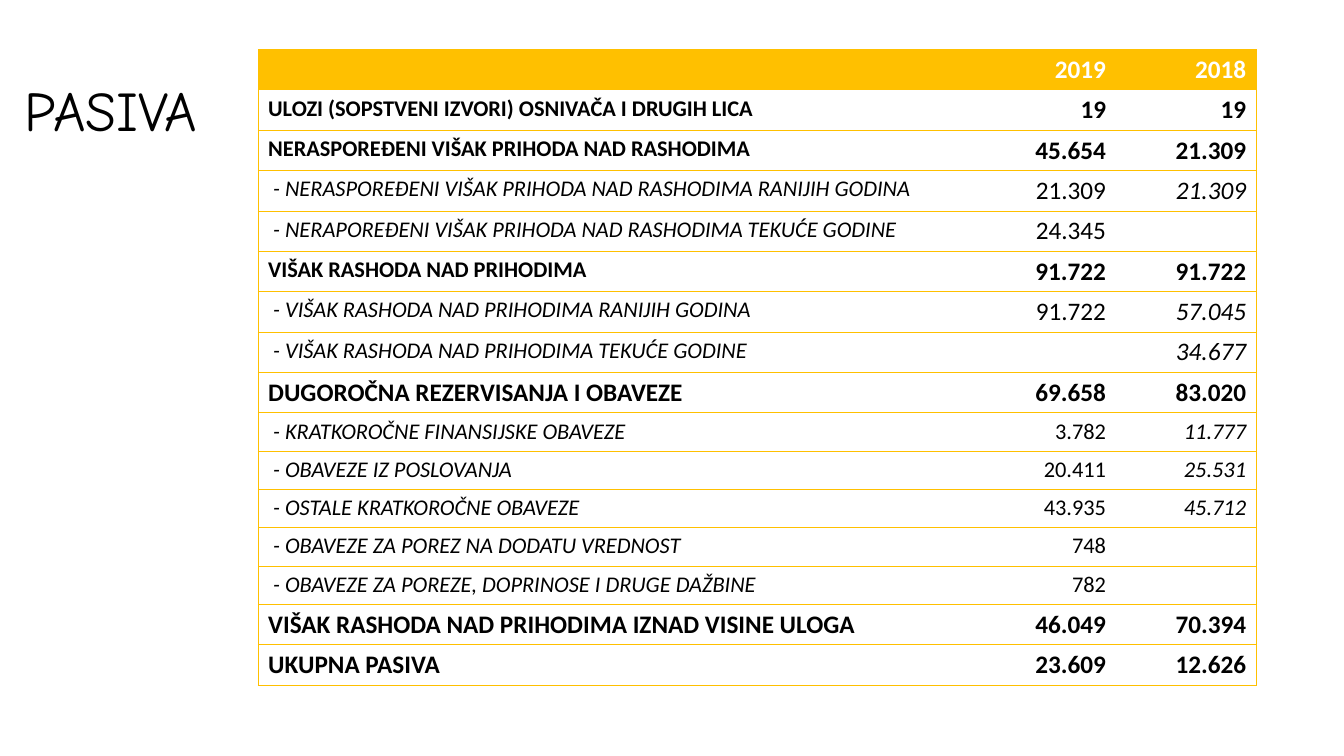
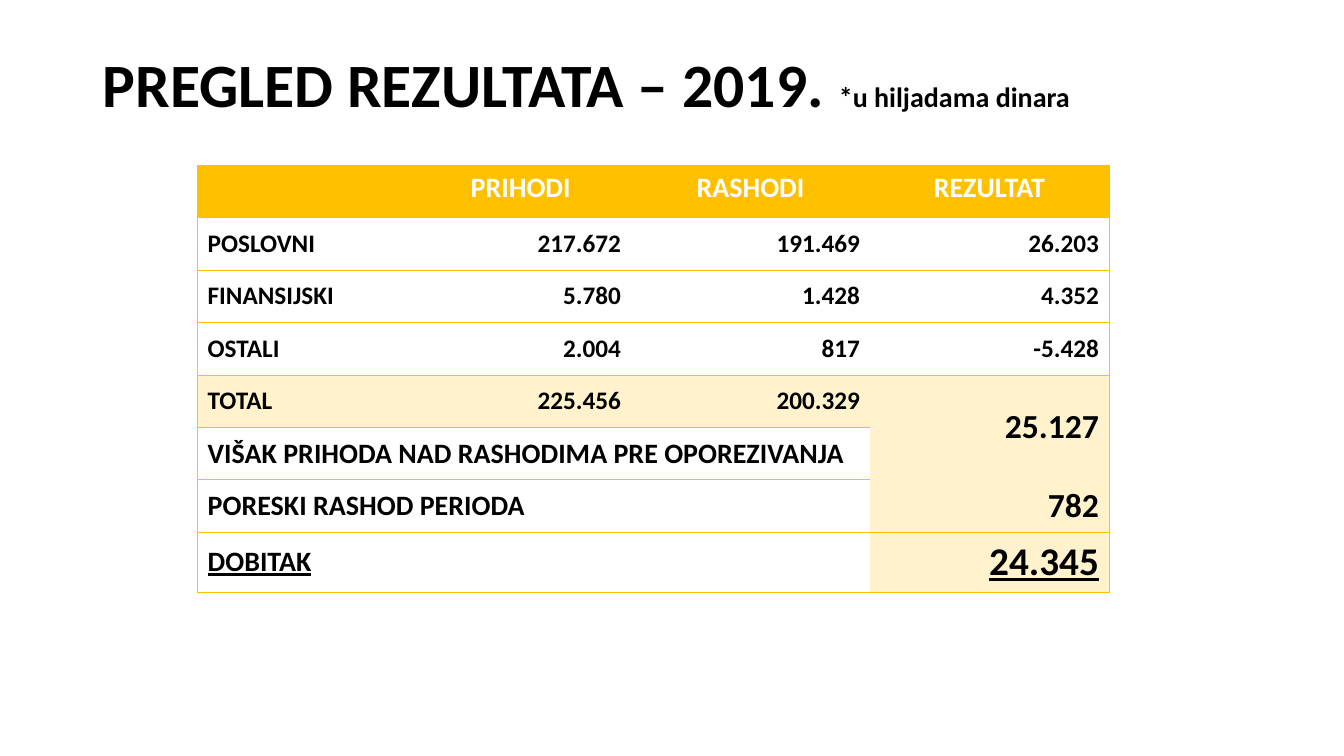
import lxml.etree
import pptx
import pptx.dml.color
import pptx.enum.text
import pptx.oxml.ns
import pptx.util

Inches = pptx.util.Inches
ALIGN = pptx.enum.text.PP_ALIGN
ANCHOR = pptx.enum.text.MSO_ANCHOR

GOLD, CREAM, WHITE, BLACK = "FFC000", "FFF2CC", "FFFFFF", "000000"
BODY_FONT = "Calibri"
BORDER_WIDTH = 0.5

LIABILITY_STYLES = {
    "header": [dict(size=18, bold=True, colour=WHITE)] * 3,
    "group": [dict(size=16, bold=True)] + [dict(size=18, bold=True)] * 2,
    "detail": [dict(size=16, italic=True), dict(size=18), dict(size=18, italic=True)],
    "item": [dict(size=16, italic=True), dict(size=16), dict(size=16, italic=True)],
    "total": [dict(size=18, bold=True)] * 3,
}
LIABILITIES = [
    ("header", "", "2019", "2018"),
    ("group", "ULOZI (SOPSTVENI IZVORI) OSNIVAČA I DRUGIH LICA", "19", "19"),
    ("group", "NERASPOREĐENI VIŠAK PRIHODA NAD RASHODIMA", "45.654", "21.309"),
    ("detail", " - NERASPOREĐENI VIŠAK PRIHODA NAD RASHODIMA RANIJIH GODINA", "21.309", "21.309"),
    ("detail", " - NERAPOREĐENI VIŠAK PRIHODA NAD RASHODIMA TEKUĆE GODINE", "24.345", ""),
    ("group", "VIŠAK RASHODA NAD PRIHODIMA", "91.722", "91.722"),
    ("detail", " - VIŠAK RASHODA NAD PRIHODIMA RANIJIH GODINA", "91.722", "57.045"),
    ("detail", " - VIŠAK RASHODA NAD PRIHODIMA TEKUĆE GODINE", "", "34.677"),
    ("total", "DUGOROČNA REZERVISANJA I OBAVEZE", "69.658", "83.020"),
    ("item", " - KRATKOROČNE FINANSIJSKE OBAVEZE", "3.782", "11.777"),
    ("item", " - OBAVEZE IZ POSLOVANJA", "20.411", "25.531"),
    ("item", " - OSTALE KRATKOROČNE OBAVEZE", "43.935", "45.712"),
    ("item", " - OBAVEZE ZA POREZ NA DODATU VREDNOST", "748", ""),
    ("item", " - OBAVEZE ZA POREZE, DOPRINOSE I DRUGE DAŽBINE", "782", ""),
    ("total", "VIŠAK RASHODA NAD PRIHODIMA IZNAD VISINE ULOGA", "46.049", "70.394"),
    ("total", "UKUPNA PASIVA", "23.609", "12.626"),
]
RESULTS = [
    ("", "PRIHODI", "RASHODI", "REZULTAT"),
    ("POSLOVNI", "217.672", "191.469", "26.203"),
    ("FINANSIJSKI", "5.780", "1.428", "4.352"),
    ("OSTALI", "2.004", "817", "-5.428"),
    ("TOTAL", "225.456", "200.329", "25.127"),
    ("VIŠAK PRIHODA NAD RASHODIMA PRE OPOREZIVANJA", "", "", ""),
    ("PORESKI RASHOD PERIODA", "", "", "782"),
    ("DOBITAK", "", "", "24.345"),
]
TOTAL_ROW, PROFIT_ROW, RESULT_COL = 4, 7, 3
OPEN_EDGES = {(4, 3, "B"), (5, 3, "T"), (5, 3, "B"), (6, 3, "T")}


def rgb(colour):
    """Turn a hex string into a colour."""
    return pptx.dml.color.RGBColor.from_string(colour)


def add_run(paragraph, text, size, colour=BLACK, font=BODY_FONT, **styles):
    """Add a formatted run to a paragraph."""
    run = paragraph.add_run()
    run.text = text
    run.font.color.rgb = rgb(colour)
    formats = dict(name=font, size=pptx.util.Pt(size), bold=False, italic=False)
    for attribute, value in {**formats, **styles}.items():
        setattr(run.font, attribute, value)


def add_title(slide, box, runs):
    """Place a title, given as runs of text and format, in a box."""
    frame = slide.shapes.add_textbox(*map(Inches, box)).text_frame
    frame.word_wrap = True
    frame.vertical_anchor = ANCHOR.MIDDLE
    paragraph = frame.paragraphs[0]
    paragraph.line_spacing = 0.9
    for text, styles in runs:
        add_run(paragraph, text, **styles)


def set_borders(cell, edges):
    """Draw the named edges of a cell in gold and clear the others."""
    properties = cell._tc.get_or_add_tcPr()
    for edge in "LRTB":
        line = lxml.etree.SubElement(
            properties, pptx.oxml.ns.qn(f"a:ln{edge}"),
            w=str(pptx.util.Pt(BORDER_WIDTH)))
        if edge in edges:
            fill = lxml.etree.SubElement(line, pptx.oxml.ns.qn("a:solidFill"))
            lxml.etree.SubElement(fill, pptx.oxml.ns.qn("a:srgbClr"), val=GOLD)
        else:
            lxml.etree.SubElement(line, pptx.oxml.ns.qn("a:noFill"))


def fill_cell(cell, text, align, anchor, fill, styles):
    """Fill a cell with its colour and formatted text."""
    cell.fill.solid()
    cell.fill.fore_color.rgb = rgb(fill)
    cell.vertical_anchor = anchor
    paragraph = cell.text_frame.paragraphs[0]
    paragraph.alignment = align
    if text:
        add_run(paragraph, text, **styles)
    else:
        lxml.etree.SubElement(paragraph._p, pptx.oxml.ns.qn("a:endParaRPr"),
                              sz=str(styles["size"] * 100))


def add_grid(slide, left, top, widths, heights, open_edges=frozenset()):
    """Add a table with a gold frame and gold rules between its rows."""
    table = slide.shapes.add_table(
        len(heights), len(widths), Inches(left), Inches(top),
        Inches(sum(widths)), Inches(sum(heights))).table
    table.horz_banding = False
    for column, width in zip(table.columns, widths):
        column.width = Inches(width)
    for row, height in zip(table.rows, heights):
        row.height = Inches(height)
    for r in range(len(heights)):
        for c in range(len(widths)):
            edges = {e for e in "TB" if (r, c, e) not in open_edges}
            if c == 0:
                edges.add("L")
            if c == len(widths) - 1:
                edges.add("R")
            set_borders(table.cell(r, c), edges)
    return table


def add_liabilities(slide, left, top):
    """Place the table of liabilities for two years."""
    table = add_grid(slide, left, top, [6.98, 1.53, 1.39], [0.38] * len(LIABILITIES))
    for r, (kind, *texts) in enumerate(LIABILITIES):
        for c, (text, styles) in enumerate(zip(texts, LIABILITY_STYLES[kind])):
            fill_cell(table.cell(r, c), text, ALIGN.RIGHT if c else ALIGN.LEFT,
                      ANCHOR.TOP, GOLD if kind == "header" else WHITE, styles)


def result_styles(r, c):
    """Give the text format of a cell in the table of results."""
    styles = dict(size=18, bold=True)
    if r == 0:
        styles.update(size=20, colour=WHITE)
    elif c == RESULT_COL and r >= TOTAL_ROW:
        styles["size"] = 28 if r == PROFIT_ROW else 24
    elif r > TOTAL_ROW:
        styles["size"] = 20
    if r == PROFIT_ROW:
        styles["underline"] = True
    return styles


def add_results(slide, left, top):
    """Place the table of income, expenses and result."""
    table = add_grid(slide, left, top, [2.11, 2.19, 2.37, 2.37],
                     [0.52] * 7 + [0.6], OPEN_EDGES)
    for r, texts in enumerate(RESULTS):
        for c, text in enumerate(texts):
            shaded = r == TOTAL_ROW or (r > TOTAL_ROW and c == RESULT_COL)
            fill = GOLD if r == 0 else CREAM if shaded else WHITE
            align = ALIGN.CENTER if r == 0 else ALIGN.RIGHT if c else ALIGN.LEFT
            fill_cell(table.cell(r, c), text, align,
                      ANCHOR.MIDDLE if r else ANCHOR.TOP, fill, result_styles(r, c))
    for r in range(TOTAL_ROW + 1, PROFIT_ROW + 1):
        table.cell(r, 0).merge(table.cell(r, RESULT_COL - 1))
    table.cell(TOTAL_ROW, RESULT_COL).merge(table.cell(TOTAL_ROW + 1, RESULT_COL))


def main():
    """Build and save both slides."""
    deck = pptx.Presentation()
    deck.slide_width, deck.slide_height = Inches(13.33), Inches(7.5)
    blank = deck.slide_layouts[6]

    liabilities = deck.slides.add_slide(blank)
    add_title(liabilities, (0.14, 0.4, 11.5, 1.45),
              [("PASIVA", dict(size=40, font="Comic Neue"))])
    add_liabilities(liabilities, 2.56, 0.49)

    results = deck.slides.add_slide(blank)
    add_title(results, (0.92, 0.4, 11.5, 0.93),
              [("PREGLED REZULTATA – 2019. ", dict(size=44, bold=True)),
               ("*u hiljadama dinara", dict(size=20, bold=True))])
    add_results(results, 1.96, 1.64)

    deck.save("out.pptx")


if __name__ == "__main__":
    main()
